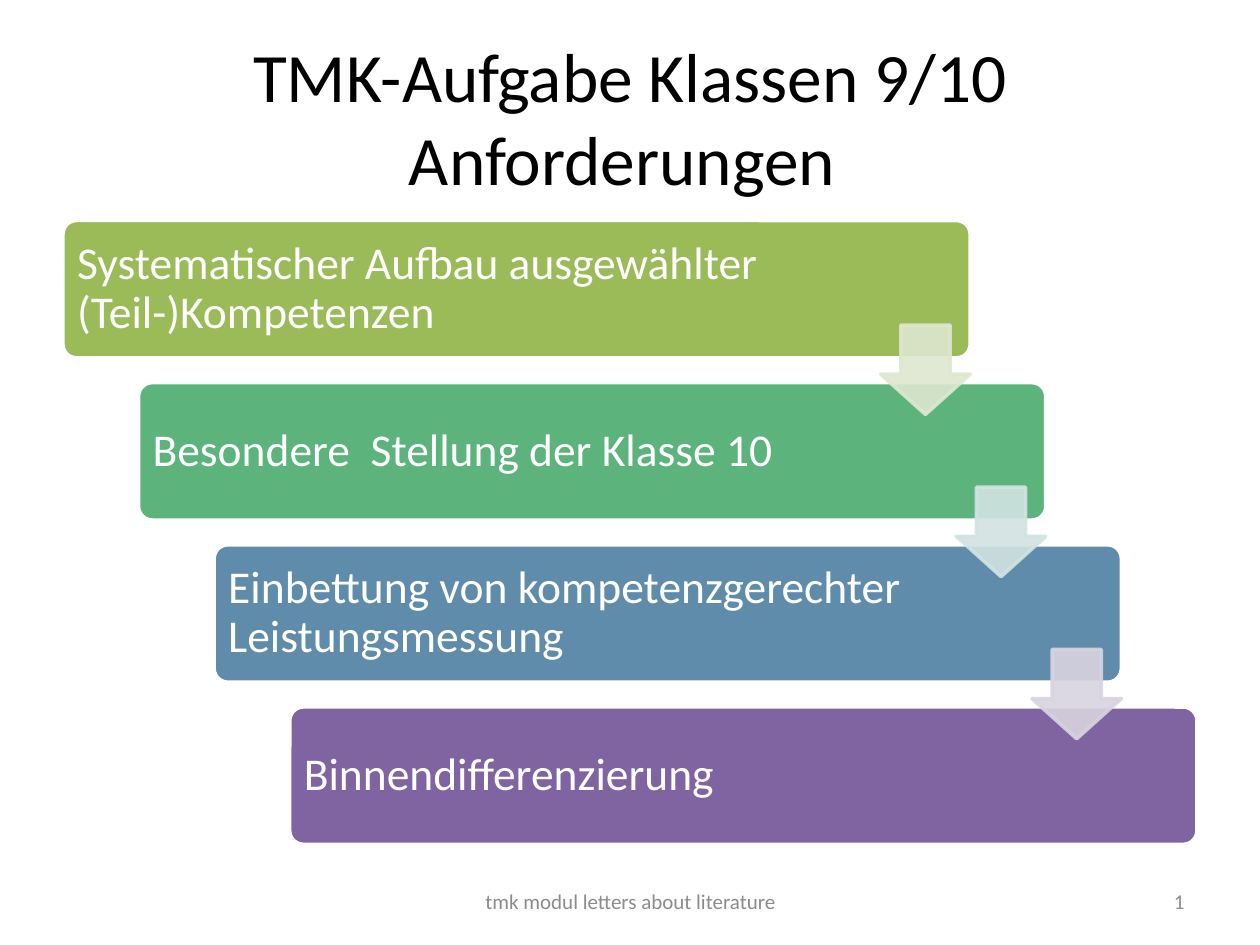
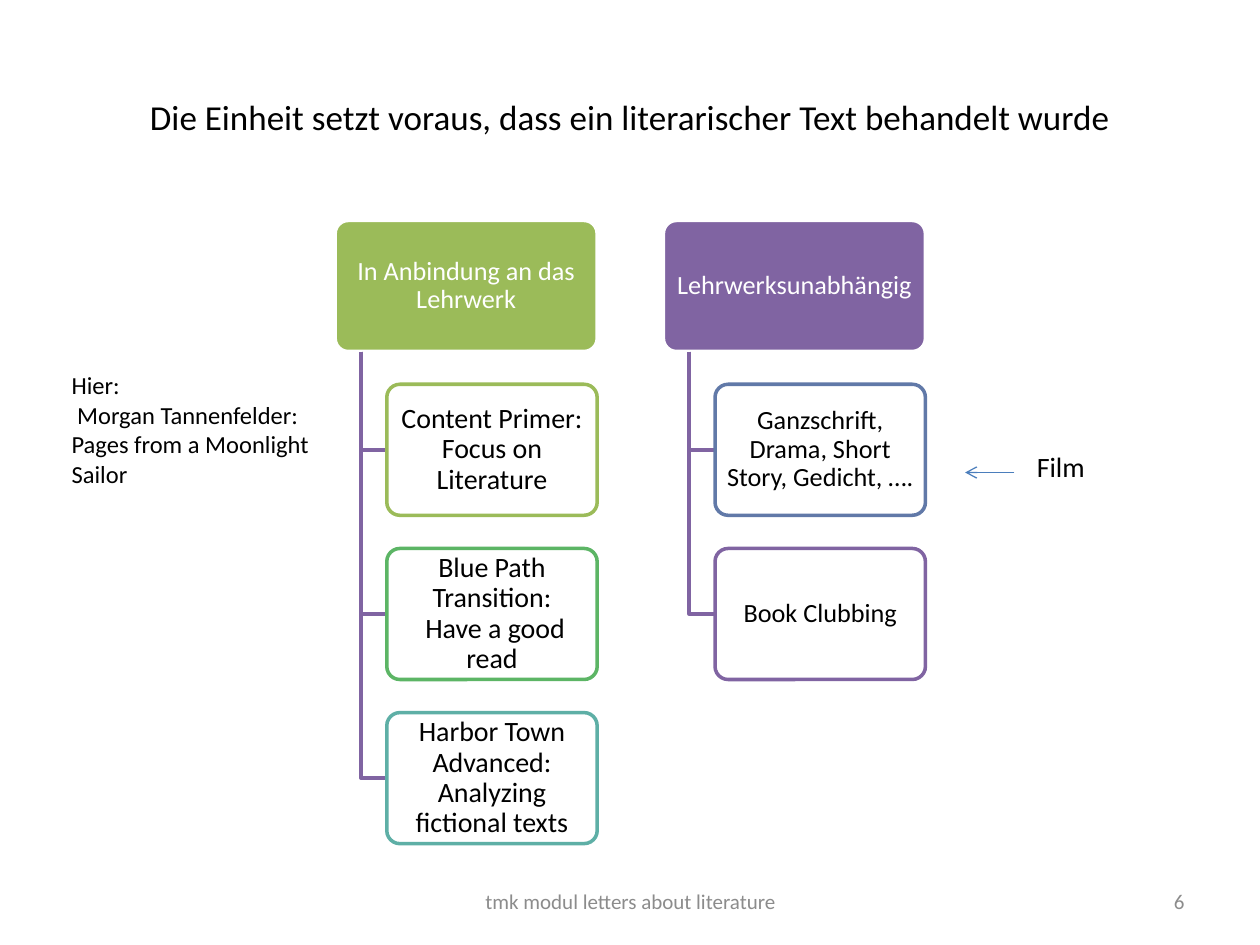
from typing import NamedTuple

from lxml import etree
from pptx import Presentation
from pptx import util as u
from pptx.dml.color import RGBColor
from pptx.enum import shapes, text
from pptx.oxml import ns

WIDTH, HEIGHT = u.Inches(10), u.Inches(7.5)
COLUMN, ROW = WIDTH / 100, HEIGHT / 75
FONT = "Calibri"
WHITE, BLACK, GREY = "FFFFFF", "000000", "8C8C8C"
GREEN, PURPLE, ARROW_BLUE = "9BBB59", "8064A2", "4B7EBC"
FOOTER = "tmk modul letters about literature"
LEFT, CENTER, RIGHT = text.PP_ALIGN.LEFT, text.PP_ALIGN.CENTER, text.PP_ALIGN.RIGHT
TOP, MIDDLE = text.MSO_ANCHOR.TOP, text.MSO_ANCHOR.MIDDLE
ROUNDED, DOWN_ARROW = shapes.MSO_SHAPE.ROUNDED_RECTANGLE, shapes.MSO_SHAPE.DOWN_ARROW


class Box(NamedTuple):
    left: float
    top: float
    width: float
    height: float

    def shifted(self, columns: float, rows: float) -> "Box":
        return self._replace(left=self.left + columns, top=self.top + rows)

    def place(self) -> tuple:
        return (x(self.left), y(self.top), x(self.width), y(self.height))


class Style(NamedTuple):
    size: float
    colour: str = BLACK
    align: text.PP_ALIGN = CENTER
    anchor: text.MSO_ANCHOR = MIDDLE
    spacing: float = 1.0
    insets: tuple = (0.1, 0.05, 0.1, 0.05)
    wrap: bool = True


class Step(NamedTuple):
    wording: str
    colour: str


class Leaf(NamedTuple):
    wording: str
    outline: str
    size: float = 15


class Branch(NamedTuple):
    heading: str
    colour: str
    leaves: list


TITLE_BOX = Box(5, 3, 90, 12.5)
FOOTER_BOX, NUMBER_BOX = Box(34.2, 69.5, 31.7, 4), Box(71.7, 69.5, 23.3, 4)

STEP_BOX, STEP_ARROW_BOX = Box(5, 17.5, 72, 10.9), Box(69.9, 25.8, 7.1, 7.1)
STEP_RIGHT, STEP_DOWN = 6, 12.87
STEPS = [
    Step("Systematischer Aufbau ausgewählter (Teil-)Kompetenzen", GREEN),
    Step("Besondere  Stellung der Klasse 10", "5CB37C"),
    Step("Einbettung von kompetenzgerechter Leistungsmessung", "608CAB"),
    Step("Binnendifferenzierung", PURPLE),
]
STEP_ARROW_COLOURS = ["DEE7D1", "D2E3E2", "D8D3E0"]

HEADING_BOX, LEAF_BOX = Box(26.6, 17.5, 20.8, 10.4), Box(30.7, 30.5, 16.7, 10.4)
BRANCH_RIGHT, LEAF_DOWN, TRUNK_INDENT = 26.05, 13.03, 2.05
BRANCHES = [
    Branch("In Anbindung an das Lehrwerk", GREEN, [
        Leaf("Content Primer: Focus on Literature", GREEN, 16),
        Leaf("Blue Path Transition:\n Have a good read", "5CB565", 16),
        Leaf("Harbor Town Advanced: Analyzing fictional texts", "5EAFA6", 16),
    ]),
    Branch("Lehrwerksunabhängig", PURPLE, [
        Leaf("Ganzschrift, Drama, Short Story, Gedicht, ….", "6179A8"),
        Leaf("Book Clubbing", PURPLE),
    ]),
]


def x(columns: float) -> int:
    return round(columns * COLUMN)


def y(rows: float) -> int:
    return round(rows * ROW)


def rgb(value: str) -> RGBColor:
    return RGBColor.from_string(value)


def write(shape, wording: str, style: Style) -> None:
    frame = shape.text_frame
    frame.word_wrap = style.wrap
    frame.auto_size = text.MSO_AUTO_SIZE.NONE
    frame.vertical_anchor = style.anchor
    (frame.margin_left, frame.margin_top,
     frame.margin_right, frame.margin_bottom) = map(u.Inches, style.insets)
    paragraph = frame.paragraphs[0]
    paragraph.alignment = style.align
    paragraph.line_spacing = style.spacing
    for index, line in enumerate(wording.split("\n")):
        if index:
            paragraph.add_line_break()
        run = paragraph.add_run()
        run.text = line
        run.font.name = FONT
        run.font.size = u.Pt(style.size)
        run.font.color.rgb = rgb(style.colour)


def add_text(slide, box: Box, wording: str, style: Style) -> None:
    write(slide.shapes.add_textbox(*box.place()), wording, style)


def set_line(shape, colour: str, width: float = 2) -> None:
    shape.line.color.rgb = rgb(colour)
    shape.line.width = u.Pt(width)


def add_panel(slide, kind, box: Box, fill: str, outline: str, adjustments: list):
    shape = slide.shapes.add_shape(kind, *box.place())
    shape.shadow.inherit = False
    for index, value in enumerate(adjustments):
        shape.adjustments[index] = value
    shape.fill.solid()
    shape.fill.fore_color.rgb = rgb(fill)
    set_line(shape, outline)
    return shape


def set_opacity(shape, percent: int) -> None:
    for colour in shape._element.spPr.iter(ns.qn("a:srgbClr")):
        etree.SubElement(colour, ns.qn("a:alpha"), val=str(percent * 1000))


def add_elbow(slide, trunk: float, top: float, end: float, bottom: float) -> None:
    builder = slide.shapes.build_freeform(x(trunk), y(top))
    builder.add_line_segments([(x(trunk), y(bottom)), (x(end), y(bottom))], close=False)
    elbow = builder.convert_to_shape()
    elbow.shadow.inherit = False
    elbow.fill.background()
    set_line(elbow, PURPLE)


def add_arrow(slide, start: tuple, end: tuple) -> None:
    arrow = slide.shapes.add_connector(
        shapes.MSO_CONNECTOR.STRAIGHT, x(start[0]), y(start[1]), x(end[0]), y(end[1]))
    set_line(arrow, ARROW_BLUE, 0.75)
    etree.SubElement(arrow.line._get_or_add_ln(), ns.qn("a:tailEnd"), type="arrow")
    etree.SubElement(arrow._element.spPr, ns.qn("a:effectLst"))


def add_slide(presentation, title: str, title_size: float, number: str):
    slide = presentation.slides.add_slide(presentation.slide_layouts[5])
    heading = slide.shapes.title
    heading.left, heading.top, heading.width, heading.height = TITLE_BOX.place()
    write(heading, title, Style(title_size))
    add_text(slide, NUMBER_BOX, number, Style(12, GREY, RIGHT))
    add_text(slide, FOOTER_BOX, FOOTER, Style(12, GREY))
    return slide


def build_requirements(presentation) -> None:
    slide = add_slide(presentation, "TMK-Aufgabe Klassen 9/10 Anforderungen ", 39.6, "1")
    style = Style(26, WHITE, LEFT, spacing=0.9, insets=(0.08, 0.08, 1.28, 0.08))
    for index, step in enumerate(STEPS):
        box = STEP_BOX.shifted(index * STEP_RIGHT, index * STEP_DOWN)
        bar = add_panel(slide, ROUNDED, box, step.colour, WHITE, [0.1])
        write(bar, step.wording, style)
    for index, colour in enumerate(STEP_ARROW_COLOURS):
        box = STEP_ARROW_BOX.shifted(index * STEP_RIGHT, index * STEP_DOWN)
        arrow = add_panel(slide, DOWN_ARROW, box, colour, colour, [0.55, 0.45])
        set_opacity(arrow, 90)


def build_prerequisites(presentation) -> None:
    slide = add_slide(
        presentation,
        "Die Einheit setzt voraus, dass ein literarischer Text behandelt wurde", 20, "6")
    tight = Style(15, spacing=0.9, insets=(0, 0, 0, 0))
    for column, branch in enumerate(BRANCHES):
        box = HEADING_BOX.shifted(column * BRANCH_RIGHT, 0)
        heading = add_panel(slide, ROUNDED, box, branch.colour, WHITE, [0.1])
        write(heading, branch.heading, tight._replace(colour=WHITE))
        for row, leaf in enumerate(branch.leaves):
            leaf_box = LEAF_BOX.shifted(column * BRANCH_RIGHT, row * LEAF_DOWN)
            add_elbow(slide, box.left + TRUNK_INDENT, box.top + box.height,
                      leaf_box.left, leaf_box.top + leaf_box.height / 2)
            panel = add_panel(slide, ROUNDED, leaf_box, WHITE, leaf.outline, [0.1])
            write(panel, leaf.wording, tight._replace(size=leaf.size))
    add_text(slide, Box(81.3, 35.2, 5.9, 3.7), "Film",
             Style(16, align=LEFT, anchor=TOP, wrap=False))
    add_arrow(slide, (80.5, 37.5), (76.6, 37.5))
    add_text(slide, Box(4.7, 28.9, 23.4, 10.4),
             "Hier:\n Morgan Tannenfelder: \nPages from a Moonlight Sailor",
             Style(14, align=LEFT, anchor=TOP))


def main() -> None:
    presentation = Presentation()
    presentation.slide_width, presentation.slide_height = WIDTH, HEIGHT
    build_requirements(presentation)
    build_prerequisites(presentation)
    presentation.save("out.pptx")


if __name__ == "__main__":
    main()
